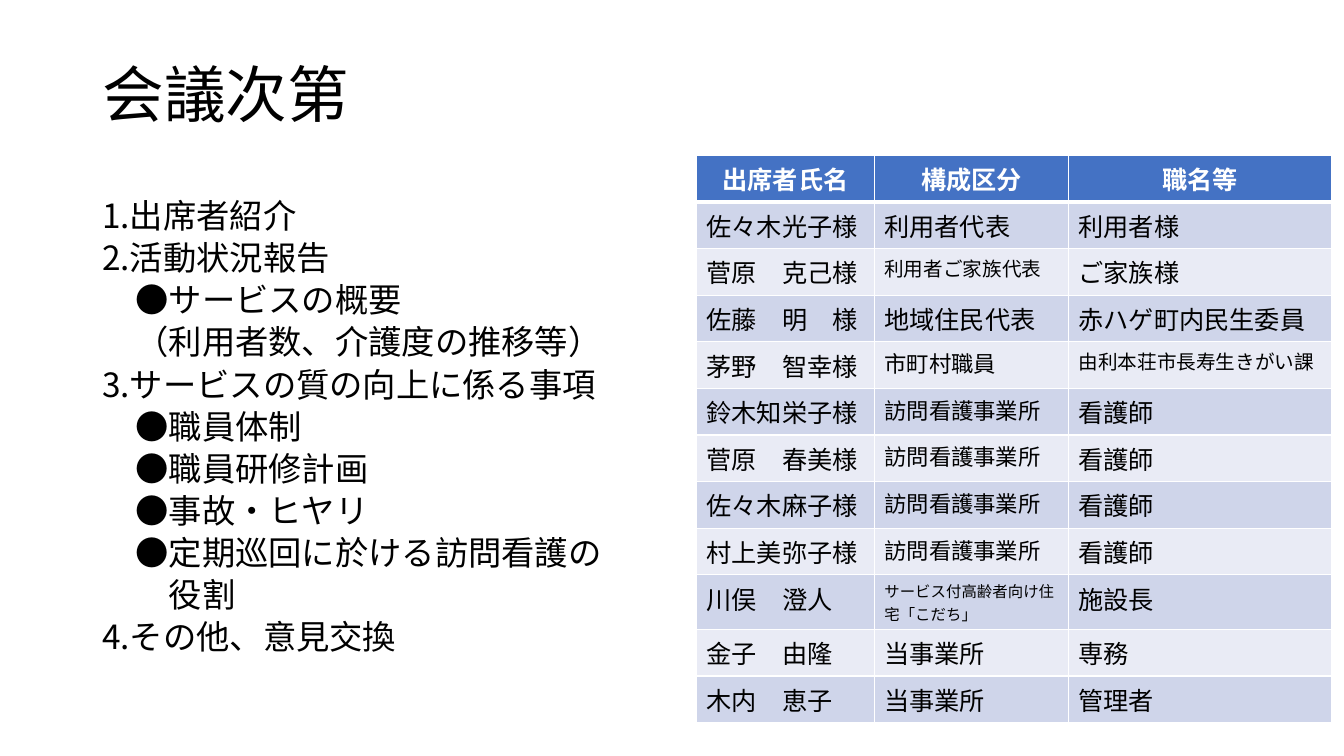
from dataclasses import dataclass

from lxml.etree import SubElement
from pptx import Presentation
from pptx.dml.color import RGBColor as RGB
from pptx.enum.text import MSO_ANCHOR as ANCHOR, MSO_AUTO_SIZE as AUTO, PP_ALIGN as ALIGN
from pptx.oxml.ns import qn
from pptx.util import Pt


@dataclass(frozen=True)
class Theme:
    """Colours, font and type sizes of the slide."""
    font: str = "Noto Sans CJK JP"
    ink: str = "000000"
    white: str = "FFFFFF"
    header: str = "4472C4"
    bands: tuple = ("CFD5EA", "E9EBF5")
    title: float = 44
    agenda: float = 23.8
    cell: float = 18
    medium: float = 16
    small: float = 14
    tiny: float = 11


T = Theme()

AGENDA = [
    (0, "1.出席者紹介"),
    (0, "2.活動状況報告"),
    (1, "●サービスの概要"),
    (1, "（利用者数、介護度の推移等）"),
    (0, "3.サービスの質の向上に係る事項"),
    (1, "●職員体制"),
    (1, "●職員研修計画"),
    (1, "●事故・ヒヤリ"),
    (1, "●定期巡回に於ける訪問看護の"),
    (2, "役割"),
    (0, "4.その他、意見交換"),
]

HEADINGS = ("出席者氏名", "構成区分", "職名等")
NURSING = ("訪問看護事業所", T.medium)
ATTENDEES = [
    ("佐々木光子様", "利用者代表", "利用者様"),
    ("菅原　克己様", ("利用者ご家族代表", T.small), "ご家族様"),
    ("佐藤　明　様", "地域住民代表", "赤ハゲ町内民生委員"),
    ("茅野　智幸様", ("市町村職員", T.medium), ("由利本荘市長寿生きがい課", T.small)),
    ("鈴木知栄子様", NURSING, "看護師"),
    ("菅原　春美様", NURSING, "看護師"),
    ("佐々木麻子様", NURSING, "看護師"),
    ("村上美弥子様", NURSING, "看護師"),
    ("川俣　澄人", ("サービス付高齢者向け住宅「こだち」", T.tiny), "施設長"),
    ("金子　由隆", "当事業所", "専務"),
    ("木内　恵子", "当事業所", "管理者"),
]
COLUMN_WIDTHS = (127, 138.7, 188)
ROW_HEIGHT = 33.3
TWO_LINE_HEIGHT = 39.1
TWO_LINE_ROW = 9


def add_run(p, text, size, color=T.ink, bold=False):
    """Add one run in the theme font, for Latin and East Asian text."""
    r = p.add_run()
    r.text = text
    r.font.name = T.font
    r.font.size = Pt(size)
    r.font.bold = bold
    r.font.color.rgb = RGB.from_string(color)
    SubElement(r.font._element, qn("a:ea"), typeface=T.font)


def add_title(s, text):
    """Place and fill the title placeholder."""
    title = s.shapes.title
    title.left, title.top, title.width, title.height = Pt(66), Pt(28.8), Pt(828), Pt(82)
    tf = title.text_frame
    tf.vertical_anchor = ANCHOR.MIDDLE
    tf.auto_size = AUTO.NONE
    p = tf.paragraphs[0]
    p.alignment = ALIGN.LEFT
    p.line_spacing = 0.9
    add_run(p, text, T.title)


def add_agenda(s, items):
    """Add the agenda, each level indented by one character."""
    tf = s.shapes.add_textbox(Pt(66), Pt(144), Pt(828), Pt(342.7)).text_frame
    tf.word_wrap = True
    for i, (level, text) in enumerate(items):
        p = tf.paragraphs[0] if i == 0 else tf.add_paragraph()
        p.line_spacing = 0.7
        p.space_before = Pt(10)
        p._p.get_or_add_pPr().set("marL", str(Pt(level * T.agenda)))
        add_run(p, text, T.agenda)


def set_borders(cell, top, bottom):
    """Draw white borders round a cell."""
    tc_pr = cell._tc.get_or_add_tcPr()
    for side, width in zip("LRTB", (1, 1, top, bottom)):
        ln = SubElement(tc_pr, qn(f"a:ln{side}"), w=str(Pt(width)))
        SubElement(SubElement(ln, qn("a:solidFill")), qn("a:srgbClr"), val=T.white)


def fill_cell(cell, content, row):
    """Write and colour a cell according to its row."""
    text, size = content if isinstance(content, tuple) else (content, T.cell)
    is_header = row == 0
    set_borders(cell, 3 if row == 1 else 1, 3 if is_header else 1)
    cell.fill.solid()
    cell.fill.fore_color.rgb = RGB.from_string(T.header if is_header else T.bands[(row - 1) % 2])
    p = cell.text_frame.paragraphs[0]
    p.alignment = ALIGN.CENTER if is_header else ALIGN.LEFT
    add_run(p, text, size, T.white if is_header else T.ink, is_header)


def add_attendees(s, rows):
    """Add the attendee table."""
    heights = [TWO_LINE_HEIGHT if i == TWO_LINE_ROW else ROW_HEIGHT for i in range(len(rows))]
    frame = s.shapes.add_table(len(rows), len(COLUMN_WIDTHS), Pt(497.5), Pt(111),
                               Pt(sum(COLUMN_WIDTHS)), Pt(sum(heights)))
    table = frame.table
    for column, width in zip(table.columns, COLUMN_WIDTHS):
        column.width = Pt(width)
    for i, (row, height) in enumerate(zip(rows, heights)):
        table.rows[i].height = Pt(height)
        for j, content in enumerate(row):
            fill_cell(table.cell(i, j), content, i)


def main():
    """Build and save the slide."""
    prs = Presentation()
    prs.slide_width, prs.slide_height = Pt(960), Pt(540)
    s = prs.slides.add_slide(prs.slide_layouts[5])
    add_title(s, "会議次第")
    add_agenda(s, AGENDA)
    add_attendees(s, [HEADINGS, *ATTENDEES])
    prs.save("out.pptx")


if __name__ == "__main__":
    main()
